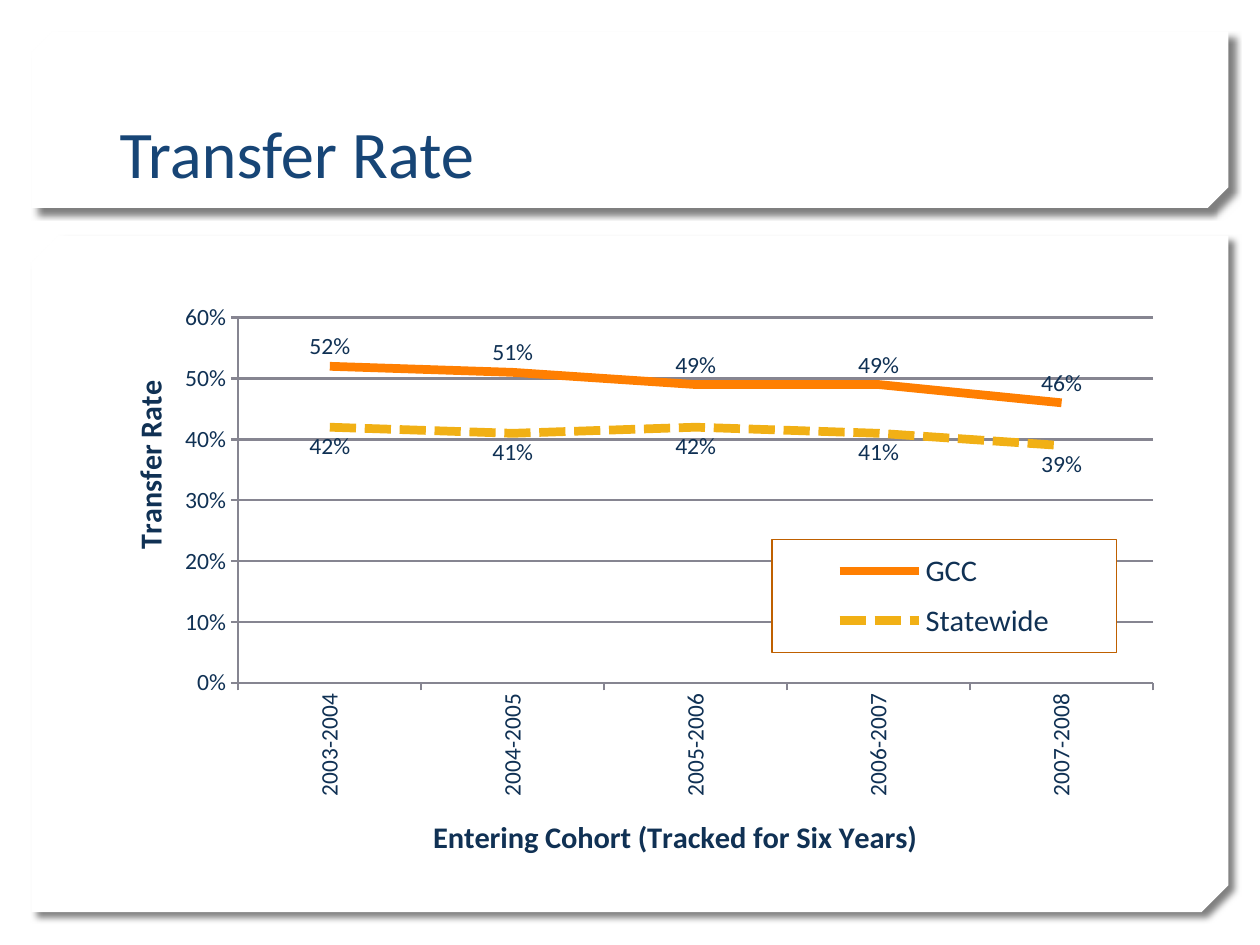
from lxml import etree
from pptx import Presentation
from pptx import util as u
from pptx.chart.data import CategoryChartData
from pptx.dml.color import RGBColor
from pptx.enum import chart as charts, dml, shapes, text
from pptx.oxml import parse_xml
from pptx.oxml.ns import nsdecls, qn

FONT = "Calibri"
INK, GRID, LEGEND_LINE = "103154", "868591", "BF6000"
TITLE = "Transfer Rate"
CATEGORY_TITLE = "Entering Cohort (Tracked for Six Years)"
VALUE_TITLE = "Transfer Rate"
PANELS = [(0.25, 1.87, 9.5, 5.37, 0.04), (0.25, 0.25, 9.5, 1.4, 0.117)]
COHORTS = [f"{year}-{year + 1}" for year in range(2003, 2008)]
SERIES = [
    ("GCC", (0.52, 0.51, 0.49, 0.49, 0.46), "FF7F01", None,
     charts.XL_LABEL_POSITION.ABOVE),
    ("Statewide", (0.42, 0.41, 0.42, 0.41, 0.39), "F1B015",
     dml.MSO_LINE.SQUARE_DOT, charts.XL_LABEL_POSITION.BELOW),
]


def color(value):
    return RGBColor.from_string(value)


def style_font(font, size, value=INK, bold=False):
    font.name = FONT
    font.size = u.Pt(size)
    font.bold = bold
    font.color.rgb = color(value)


def style_line(line, value, width):
    line.color.rgb = color(value)
    line.width = u.Pt(width)


def place(element, index, inner=False, **fractions):
    for layout in element.findall(qn("c:layout")):
        element.remove(layout)
    layout = etree.Element(qn("c:layout"))
    manual = etree.SubElement(layout, qn("c:manualLayout"))
    if inner:
        etree.SubElement(manual, qn("c:layoutTarget"), val="inner")
    for name in ("xMode", "yMode"):
        etree.SubElement(manual, qn(f"c:{name}"), val="edge")
    for name, value in fractions.items():
        etree.SubElement(manual, qn(f"c:{name}"), val=str(value))
    element.insert(index, layout)


def add_panel(slide, left, top, width, height, snip):
    panel = slide.shapes.add_shape(
        shapes.MSO_SHAPE.SNIP_2_DIAG_RECTANGLE,
        *map(u.Inches, (left, top, width, height)))
    panel.adjustments[0] = snip
    panel.adjustments[1] = 0
    panel.fill.solid()
    panel.fill.fore_color.rgb = color("FFFFFF")
    panel.line.fill.background()
    panel._element.spPr.append(parse_xml(
        f'<a:effectLst {nsdecls("a")}><a:outerShdw blurRad="{u.Pt(4)}" '
        f'dist="{u.Pt(5)}" dir="2700000" algn="tl" rotWithShape="0">'
        '<a:srgbClr val="000000"><a:alpha val="50000"/></a:srgbClr>'
        '</a:outerShdw></a:effectLst>'))


def style_axis(axis, title, x, y):
    axis.major_tick_mark = charts.XL_TICK_MARK.OUTSIDE
    axis.minor_tick_mark = charts.XL_TICK_MARK.NONE
    style_font(axis.tick_labels.font, 13.5)
    style_line(axis.format.line, GRID, 1.25)
    frame = axis.axis_title.text_frame
    frame.text = title
    style_font(frame.paragraphs[0].runs[0].font, 17.4, bold=True)
    place(axis.axis_title._element, 1, x=x, y=y)


def add_line_chart(slide):
    data = CategoryChartData(number_format="0%")
    data.categories = COHORTS
    for name, values, *_ in SERIES:
        data.add_series(name, values)
    chart = slide.shapes.add_chart(
        charts.XL_CHART_TYPE.LINE,
        *map(u.Inches, (0.48, 2.3, 9.11, 4.57)), data).chart
    chart.has_title = False
    style_font(chart.font, 17.4)
    place(chart._chartSpace.chart.plotArea, 0, inner=True,
          x=0.155, y=0.049, w=0.797, h=0.645)

    category_axis, value_axis = chart.category_axis, chart.value_axis
    style_axis(category_axis, CATEGORY_TITLE, 0.32, 0.92)
    style_axis(value_axis, VALUE_TITLE, 0.055, 0.155)
    category_axis._element.find(qn("c:txPr")).find(
        qn("a:bodyPr")).set("rot", "-5400000")
    value_axis.axis_title.text_frame._txBody.bodyPr.set("rot", "-5400000")
    value_axis.minimum_scale = 0
    value_axis.maximum_scale = 0.6
    value_axis.major_unit = 0.1
    value_axis.tick_labels.number_format = "0%"
    value_axis.tick_labels.number_format_is_linked = False
    style_line(value_axis.major_gridlines.format.line, GRID, 1.25)

    for series, (_, _, value, dash, position) in zip(chart.series, SERIES):
        series.smooth = False
        series.marker.style = charts.XL_MARKER_STYLE.NONE
        style_line(series.format.line, value, 5)
        if dash:
            series.format.line.dash_style = dash
        labels = series.data_labels
        labels.show_value = True
        labels.position = position
        labels.number_format = "0%"
        labels.number_format_is_linked = False
        style_font(labels.font, 13.5)

    chart.has_legend = True
    legend = chart.legend
    legend.position = charts.XL_LEGEND_POSITION.RIGHT
    legend.include_in_layout = False
    style_font(legend.font, 17.4)
    place(legend._element, 1, x=0.62, y=0.44, w=0.3, h=0.2)
    legend._element.find(qn("c:txPr")).addprevious(parse_xml(
        f'<c:spPr {nsdecls("c", "a")}>'
        '<a:solidFill><a:srgbClr val="FFFFFF"/></a:solidFill>'
        f'<a:ln w="{u.Pt(0.75)}"><a:solidFill><a:srgbClr val="{LEGEND_LINE}"/>'
        '</a:solidFill></a:ln></c:spPr>'))


def main():
    presentation = Presentation()
    presentation.slide_width = u.Inches(10)
    presentation.slide_height = u.Inches(7.5)
    slide = presentation.slides.add_slide(presentation.slide_layouts[5])
    for panel in PANELS:
        add_panel(slide, *panel)

    title = slide.shapes.title
    slide.shapes._spTree.append(title._element)
    title.left, title.top, title.width, title.height = map(
        u.Inches, (0.85, 0.32, 8.29, 1.25))
    frame = title.text_frame
    frame.text = TITLE
    frame.vertical_anchor = text.MSO_ANCHOR.BOTTOM
    paragraph = frame.paragraphs[0]
    paragraph.alignment = text.PP_ALIGN.LEFT
    style_font(paragraph.runs[0].font, 38, "174576")

    add_line_chart(slide)
    presentation.save("out.pptx")


if __name__ == "__main__":
    main()
